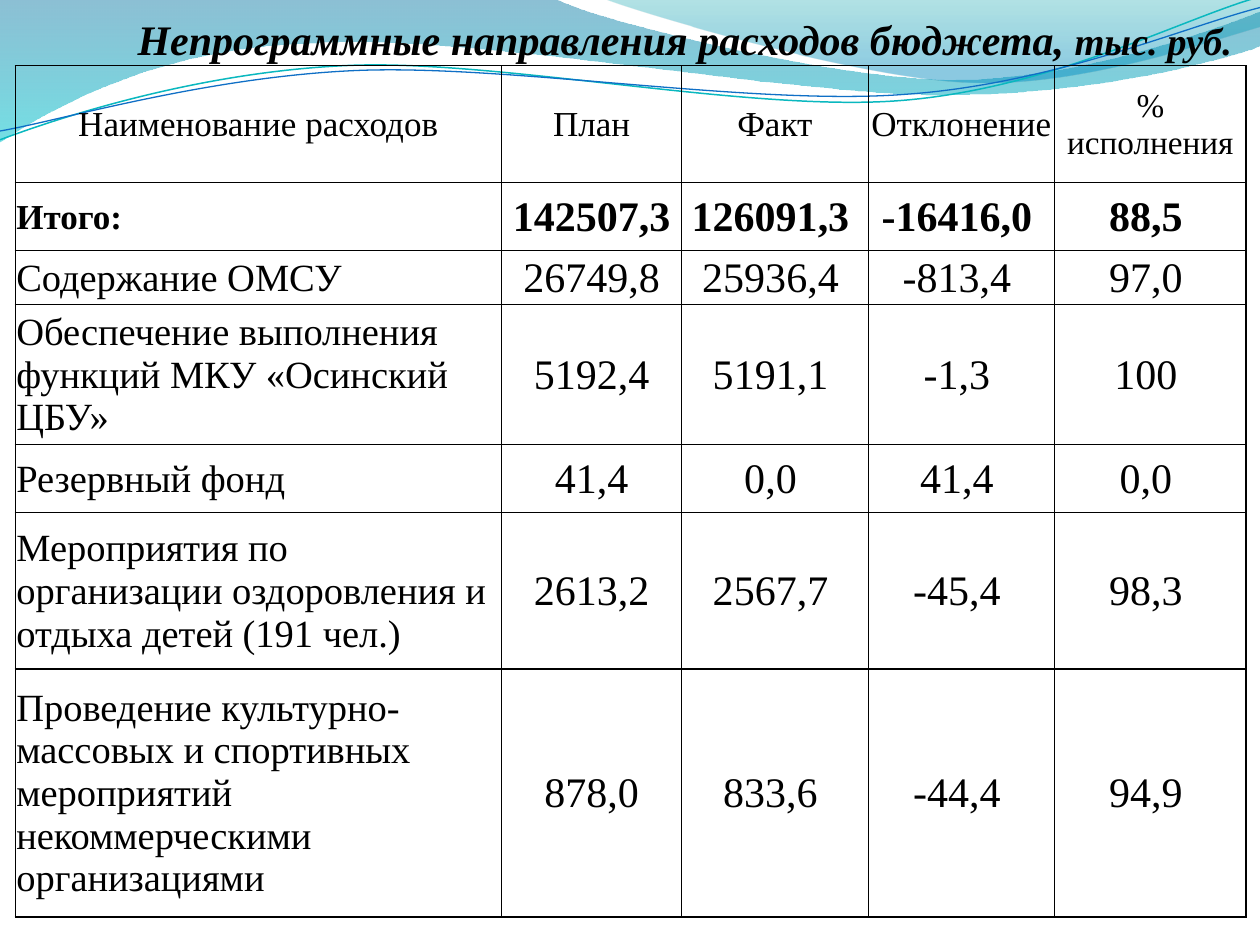
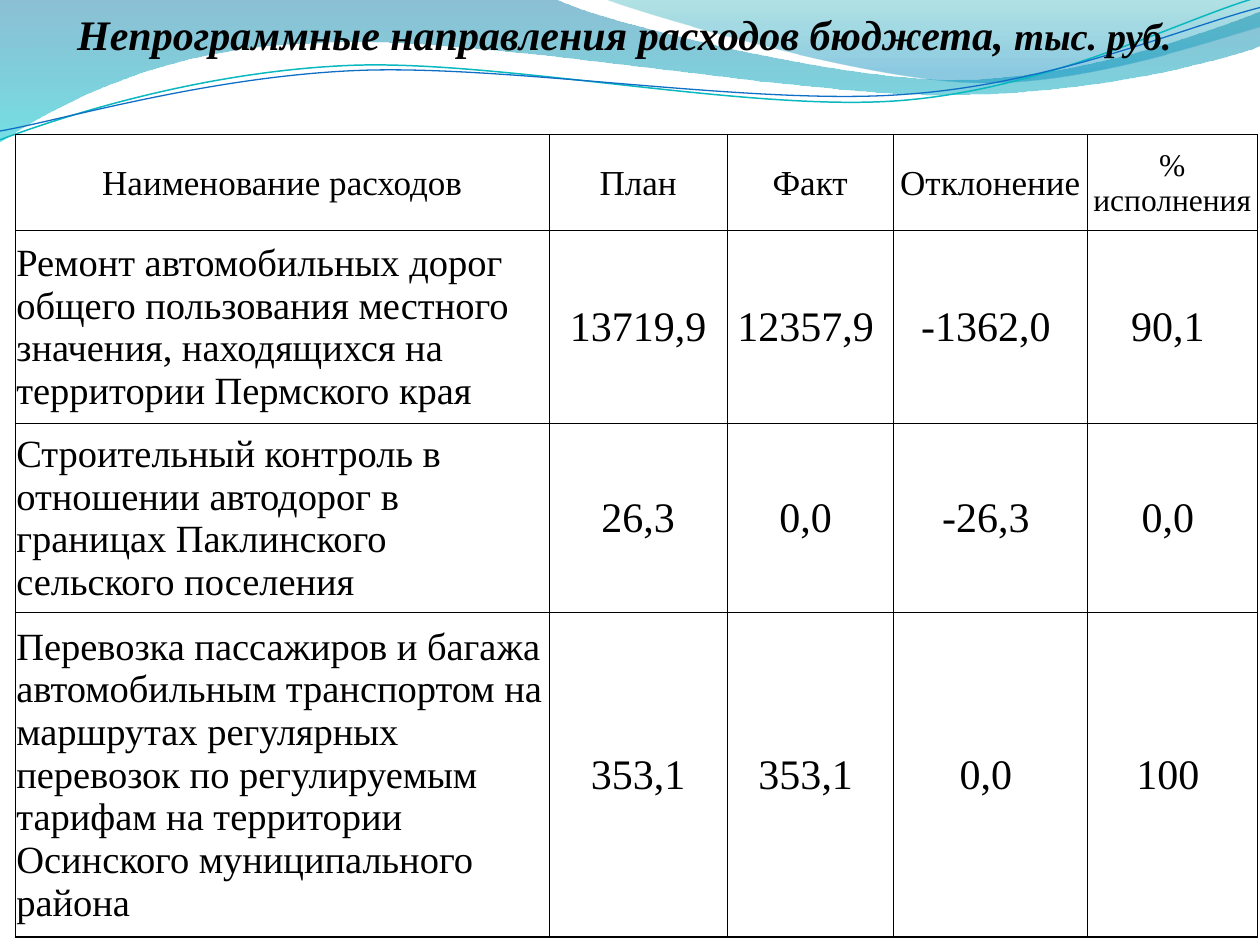
from dataclasses import dataclass

from lxml.etree import SubElement
from pptx import Presentation
from pptx.dml.color import RGBColor
from pptx.enum.text import MSO_ANCHOR as Anchor, PP_ALIGN as Align
from pptx.oxml.ns import qn
from pptx.shapes.autoshape import Shape
from pptx.slide import Slide, SlideLayout
from pptx.table import _Cell as Cell
from pptx.text.text import _Paragraph as Paragraph
from pptx.util import Inches, Pt

FONT = "Times New Roman"
BLACK = RGBColor(0x00, 0x00, 0x00)
DEEP_BLUE = RGBColor(0x00, 0x74, 0xA1)
AQUA = RGBColor(0x00, 0xC6, 0xCF)
TEAL = RGBColor(0x00, 0xA1, 0xA9)
SKY_BLUE = RGBColor(0x00, 0x8B, 0xBF)
LINE_TEAL = RGBColor(0x0A, 0xB8, 0xBF)
LINE_BLUE = RGBColor(0x0F, 0x6F, 0xC6)

THIN, THICK = 0.5, 1.0
HEADINGS = ("Наименование расходов", "План", "Факт", "Отклонение", "% исполнения")
TOTAL_LABEL = "Итого:"

Point = tuple[float, float]


@dataclass(frozen=True)
class Outline:
    """A start point, then steps: one point for a line, three for a curve."""
    start: Point
    steps: tuple[tuple[Point, ...], ...]
    closed: bool = False


@dataclass(frozen=True)
class GradientStop:
    position: float
    color: RGBColor
    opacity: int


@dataclass(frozen=True)
class WaveBand:
    outline: Outline
    stops: tuple[GradientStop, GradientStop]


@dataclass(frozen=True)
class WaveLine:
    outline: Outline
    color: RGBColor
    width: float


@dataclass(frozen=True)
class BudgetPage:
    title_box: tuple[float, float, float, float]
    table_at: Point
    columns: tuple[float, ...]
    row_heights: tuple[float, ...]
    percent_size: int
    first_thick_row: int
    rows: tuple[tuple[str, ...], ...]


WAVE_BANDS = (
    WaveBand(
        Outline((0, 0), (
            ((4.4, -0.01),),
            ((4.76, 0.17), (6.64, 0.63), (7.58, 0.63)),
            ((8.53, 0.63), (9.58, 0.26), (10, 0.09)),
            ((10.01, 0.36),),
            ((9.83, 0.44), (8.7, 0.76), (7.46, 0.75)),
            ((6.22, 0.75), (3.82, 0.28), (2.57, 0.34)),
            ((1.29, 0.36), (0.46, 0.83), (-0.01, 1.13)),
            ((0, 0),),
        ), closed=True),
        (GradientStop(0, DEEP_BLUE, 45), GradientStop(1, AQUA, 55)),
    ),
    WaveBand(
        Outline((4.79, -0.01), (
            ((5.09, 0.11), (6.82, 0.62), (7.69, 0.65)),
            ((8.56, 0.69), (9.61, 0.32), (10, 0.21)),
            ((10, 0),),
            ((4.79, -0.01),),
        ), closed=True),
        (GradientStop(0, TEAL, 30), GradientStop(0.8, SKY_BLUE, 45)),
    ),
)

WAVE_LINES = (
    WaveLine(
        Outline((0, 1.11), (
            ((0.48, 0.93), (1.58, 0.57), (2.77, 0.52)),
            ((3.95, 0.47), (5.93, 0.89), (7.13, 0.8)),
            ((8.33, 0.71), (9.38, 0.15), (9.98, -0.02)),
        )), LINE_TEAL, 0.85,
    ),
    WaveLine(
        Outline((0, 1.04), (
            ((0.47, 0.96), (1.64, 0.61), (2.83, 0.56)),
            ((4.03, 0.51), (5.97, 0.84), (7.17, 0.75)),
            ((8.36, 0.67), (9.41, 0.21), (10, 0.06)),
        )), LINE_BLUE, 0.75,
    ),
)

PAGES = (
    BudgetPage(
        title_box=(0.75, 0.06, 9.37, 0.51),
        table_at=(0.12, 0.52),
        columns=(3.86, 1.43, 1.48, 1.48, 1.52),
        row_heights=(0.93, 0.54, 0.43, 1.11, 0.54, 1.24, 1.97),
        percent_size=19,
        first_thick_row=5,
        rows=(
            (TOTAL_LABEL, "142507,3", "126091,3", "-16416,0", "88,5"),
            ("Содержание ОМСУ", "26749,8", "25936,4", "-813,4", "97,0"),
            ("Обеспечение выполнения функций МКУ «Осинский ЦБУ»",
             "5192,4", "5191,1", "-1,3", "100"),
            ("Резервный фонд", "41,4", "0,0", "41,4", "0,0"),
            ("Мероприятия по организации оздоровления и отдыха детей (191 чел.)",
             "2613,2", "2567,7", "-45,4", "98,3"),
            ("Проведение культурно-массовых и спортивных мероприятий "
             "некоммерческими организациями", "878,0", "833,6", "-44,4", "94,9"),
        ),
    ),
    BudgetPage(
        title_box=(0.35, 0.02, 9.21, 0.51),
        table_at=(0.12, 1.07),
        columns=(4.24, 1.41, 1.32, 1.54, 1.35),
        row_heights=(0.76, 1.53, 1.5, 2.57),
        percent_size=18,
        first_thick_row=1,
        rows=(
            ("Ремонт автомобильных дорог общего пользования местного значения, "
             "находящихся на территории Пермского края",
             "13719,9", "12357,9", "-1362,0", "90,1"),
            ("Строительный контроль в отношении автодорог в границах "
             "Паклинского сельского поселения", "26,3", "0,0", "-26,3", "0,0"),
            ("Перевозка пассажиров и багажа автомобильным транспортом на маршрутах "
             "регулярных перевозок по регулируемым тарифам на территории "
             "Осинского муниципального района", "353,1", "353,1", "0,0", "100"),
        ),
    ),
)


def bend_curves(shape: Shape, outline: Outline) -> None:
    """Join each three segments that stand for a curve into one cubic curve."""
    segments = iter(list(shape.element.iter(qn("a:lnTo"))))
    for step in outline.steps:
        first, *others = [next(segments) for _ in step]
        if others:
            first.tag = qn("a:cubicBezTo")
        for segment in others:
            first.append(segment[0])
            segment.getparent().remove(segment)


def draw_outline(page: Slide, outline: Outline) -> Shape:
    points = [(Inches(x), Inches(y)) for step in outline.steps for x, y in step]
    start_x, start_y = outline.start
    builder = page.shapes.build_freeform(Inches(start_x), Inches(start_y), scale=1.0)
    builder.add_line_segments(points, close=False)
    if outline.closed:
        builder.add_line_segments((), close=True)
    shape = builder.convert_to_shape()
    bend_curves(shape, outline)
    shape.shadow.inherit = False
    return shape


def draw_band(page: Slide, band: WaveBand) -> Shape:
    shape = draw_outline(page, band.outline)
    shape.line.fill.background()
    shape.fill.gradient()
    shape.fill.gradient_angle = 270
    for stop, wanted in zip(shape.fill.gradient_stops, band.stops):
        stop.position = wanted.position
        stop.color.rgb = wanted.color
    for color, wanted in zip(shape.element.iter(qn("a:srgbClr")), band.stops):
        SubElement(color, qn("a:alpha"), val=str(wanted.opacity * 1000))
    return shape


def draw_line(page: Slide, wave: WaveLine) -> Shape:
    shape = draw_outline(page, wave.outline)
    shape.fill.background()
    shape.line.color.rgb = wave.color
    shape.line.width = Pt(wave.width)
    return shape


def put_waves_on_layout(page: Slide, layout: SlideLayout) -> None:
    """Draw the waves with the page's builder and move them to the shared layout."""
    waves = [draw_band(page, band) for band in WAVE_BANDS]
    waves += [draw_line(page, wave) for wave in WAVE_LINES]
    for shape in waves:
        layout.shapes.element.append(shape.element)


def add_span(para: Paragraph, text: str, size: int,
             bold: bool = False, italic: bool = False) -> None:
    span = para.add_run()
    span.text = text
    font = span.font
    font.name, font.size, font.bold, font.italic = FONT, Pt(size), bold, italic
    font.color.rgb = BLACK


def add_title(page: Slide, place: tuple[float, ...]) -> None:
    box = page.shapes.add_textbox(*map(Inches, place))
    box.text_frame.word_wrap = True
    para = box.text_frame.paragraphs[0]
    para.alignment = Align.CENTER
    add_span(para, "Непрограммные направления расходов бюджета, ", 24, True, True)
    add_span(para, "тыс. руб.", 22, True, True)


def set_borders(cell: Cell, left: float, right: float, top: float, bottom: float) -> None:
    properties = cell._tc.get_or_add_tcPr()
    for side, width in zip("LRTB", (left, right, top, bottom)):
        line = SubElement(properties, qn(f"a:ln{side}"), w=str(Pt(width)))
        fill = SubElement(line, qn("a:solidFill"))
        SubElement(fill, qn("a:srgbClr"), val=str(BLACK))


def text_size(page_data: BudgetPage, row: int, column: int, bold: bool) -> int:
    if row == 0:
        return page_data.percent_size if column == len(HEADINGS) - 1 else 20
    if column == 0:
        return 20 if bold else 22
    return 24


def fill_cell(cell: Cell, page_data: BudgetPage, row: int, column: int,
              text: str, bold: bool) -> None:
    is_last_column = column == len(HEADINGS) - 1
    thick_row = page_data.first_thick_row
    set_borders(cell, THIN, THICK if is_last_column else THIN,
                THICK if row > thick_row else THIN,
                THICK if row >= thick_row else THIN)
    cell.fill.background()
    cell.vertical_anchor = Anchor.MIDDLE
    cell.margin_left = cell.margin_top = Inches(0.01)
    cell.margin_right = Inches(0.08 if row > 0 and column > 1 else 0.01)
    cell.margin_bottom = 0
    para = cell.text_frame.paragraphs[0]
    para.alignment = Align.LEFT if row > 0 and column == 0 else Align.CENTER
    add_span(para, text, text_size(page_data, row, column, bold), bold)


def add_budget_table(page: Slide, page_data: BudgetPage) -> None:
    rows = (HEADINGS, *page_data.rows)
    left, top = page_data.table_at
    frame = page.shapes.add_table(
        len(rows), len(HEADINGS), Inches(left), Inches(top),
        Inches(sum(page_data.columns)), Inches(sum(page_data.row_heights)))
    table = frame.table
    table.first_row = table.horz_banding = False
    for column, width in zip(table.columns, page_data.columns):
        column.width = Inches(width)
    for row, height in zip(table.rows, page_data.row_heights):
        row.height = Inches(height)
    for row, texts in enumerate(rows):
        bold = texts[0] == TOTAL_LABEL
        for column, text in enumerate(texts):
            fill_cell(table.cell(row, column), page_data, row, column, text, bold)


def main() -> None:
    deck = Presentation()
    deck.slide_width, deck.slide_height = Inches(10), Inches(7.5)
    layout = deck.slide_layouts[6]
    pages = [deck.slides.add_slide(layout) for _ in PAGES]
    put_waves_on_layout(pages[0], layout)
    for page, page_data in zip(pages, PAGES):
        add_title(page, page_data.title_box)
        add_budget_table(page, page_data)
    deck.save("out.pptx")


if __name__ == "__main__":
    main()
